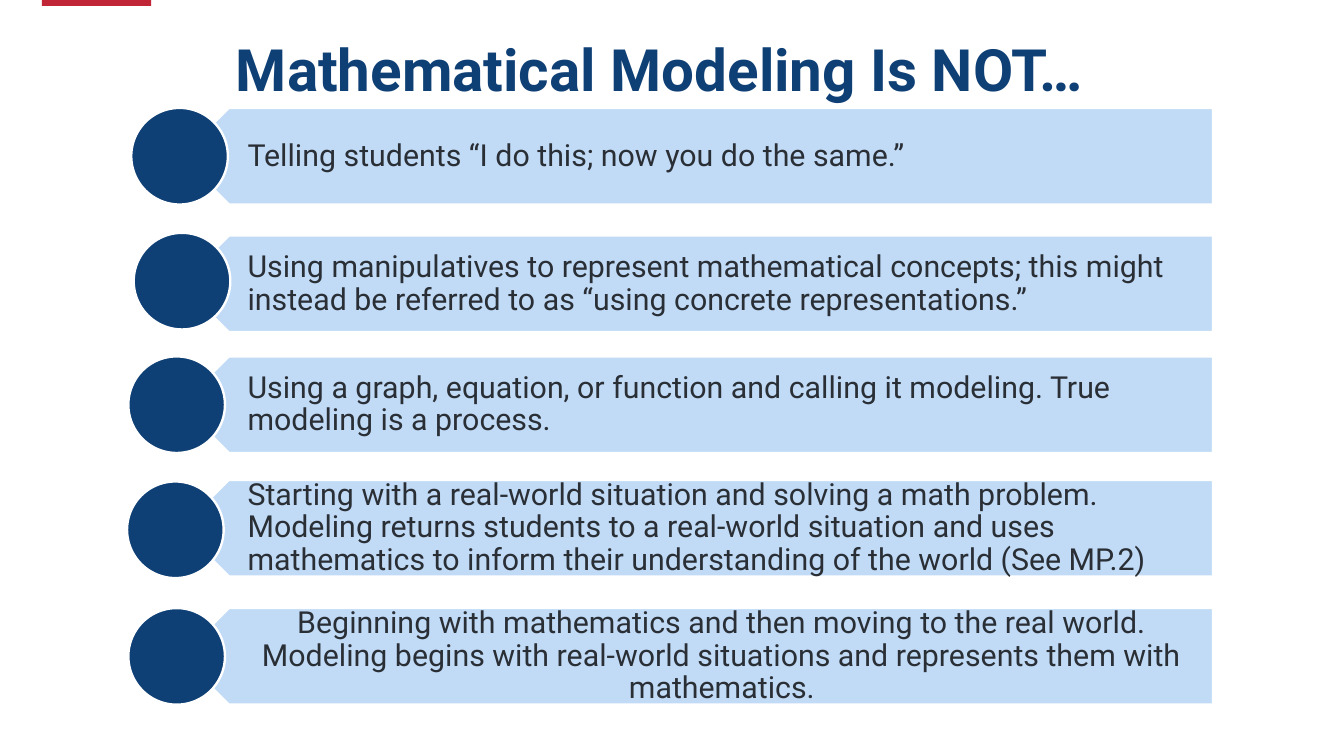
from pptx import Presentation, util as u
from pptx.dml.color import RGBColor
from pptx.enum import shapes, text

Pt = u.Pt
NAVY = RGBColor(0x0E, 0x3F, 0x75)
PALE_BLUE = RGBColor(0xC1, 0xDB, 0xF7)
RED = RGBColor(0xC1, 0x26, 0x37)
WHITE = RGBColor(0xFF, 0xFF, 0xFF)
INK = RGBColor(0x2A, 0x2F, 0x36)
FONT = "Roboto"
ROW_HEIGHT = 82.8
LEFT, CENTER = text.PP_ALIGN.LEFT, text.PP_ALIGN.CENTER

# Bar top, circle left, circle top, alignment, wording
MISCONCEPTIONS = [
    (92.5, 112.5, 92.5, LEFT,
     "Telling students “I do this; now you do the same.”"),
    (201.9, 114.6, 199.6, LEFT,
     "Using manipulatives to represent mathematical concepts; this might "
     "instead be referred to as “using concrete representations.”"),
    (305.5, 110, 305.5, LEFT,
     "Using a graph, equation, or function and calling it modeling. "
     "True modeling is a process."),
    (411.3, 108.9, 412.7, LEFT,
     "Starting with a real-world situation and solving a math problem. "
     "Modeling returns students to a real-world situation and uses "
     "mathematics to inform their understanding of the world (See MP.2)"),
    (521.2, 110, 521.2, CENTER,
     "Beginning with mathematics and then moving to the real world. "
     "Modeling begins with real-world situations and represents them "
     "with mathematics."),
]


def add_filled(page, kind, left, top, width, height, color, outlined=True):
    shape = page.shapes.add_shape(kind, Pt(left), Pt(top), Pt(width), Pt(height))
    shape.shadow.inherit = False
    shape.fill.solid()
    shape.fill.fore_color.rgb = color
    if outlined:
        shape.line.color.rgb = WHITE
        shape.line.width = Pt(2)
    else:
        shape.line.fill.background()
    return shape


def add_text(page, wording, left, top, width, height, insets, size, color,
             bold=False, align=LEFT, anchor=text.MSO_ANCHOR.MIDDLE):
    """Insets run left, top, right, bottom."""
    box = page.shapes.add_textbox(Pt(left), Pt(top), Pt(width), Pt(height))
    frame = box.text_frame
    frame.word_wrap = True
    frame.vertical_anchor = anchor
    (frame.margin_left, frame.margin_top,
     frame.margin_right, frame.margin_bottom) = map(Pt, insets)
    para = frame.paragraphs[0]
    para.alignment = align
    para.line_spacing = 0.9
    span = para.add_run()
    span.text = wording
    span.font.name = FONT
    span.font.size = Pt(size)
    span.font.bold = bold
    span.font.color.rgb = color


def add_misconception(page, top, circle_left, circle_top, align, wording):
    bar = add_filled(page, shapes.MSO_SHAPE.PENTAGON, 154.8, top, 884.9,
                     ROW_HEIGHT, PALE_BLUE)
    bar.rotation = 180
    add_text(page, wording, 175.7, top, 864, ROW_HEIGHT,
             (36.5, 8, 14.2, 8), 26, INK, align=align)
    add_filled(page, shapes.MSO_SHAPE.OVAL, circle_left, circle_top,
               ROW_HEIGHT, ROW_HEIGHT, NAVY)


def main():
    deck = Presentation()
    deck.slide_width, deck.slide_height = Pt(1152), Pt(648)
    page = deck.slides.add_slide(deck.slide_layouts[6])
    add_filled(page, shapes.MSO_SHAPE.RECTANGLE, 36, 0, 93.6, 5, RED,
               outlined=False)
    add_text(page, "Mathematical Modeling Is NOT…", 193.7, 31, 913.7, 61.2,
             (8.6, 4.3, 8.6, 4.3), 50, NAVY, bold=True,
             anchor=text.MSO_ANCHOR.TOP)
    for misconception in MISCONCEPTIONS:
        add_misconception(page, *misconception)
    deck.save("out.pptx")


if __name__ == "__main__":
    main()
